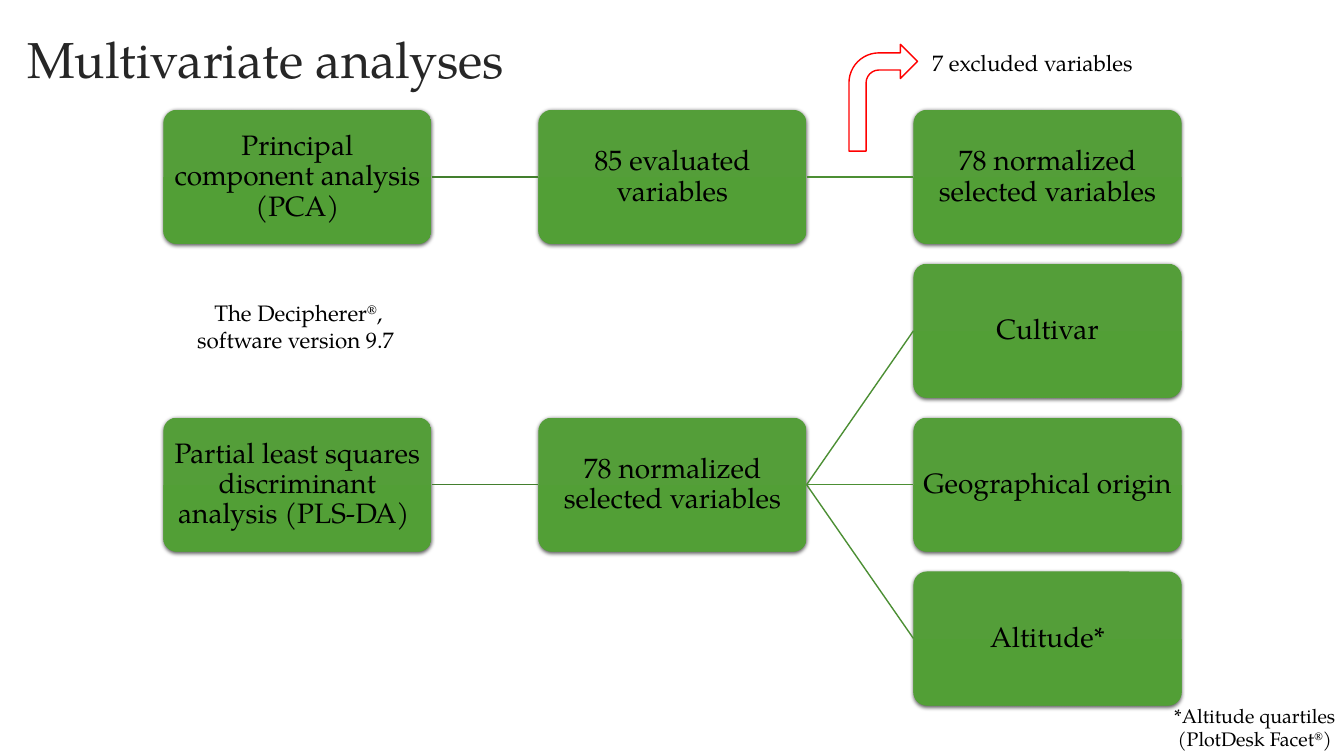
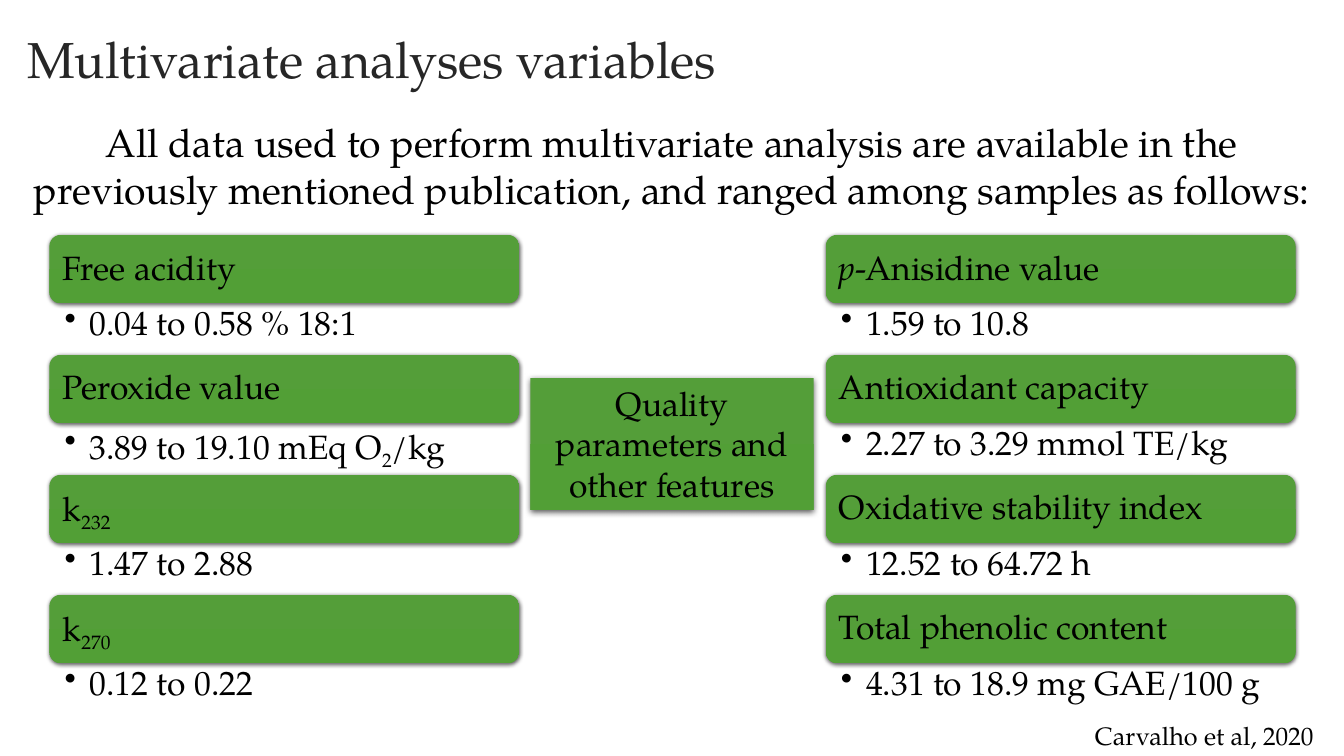
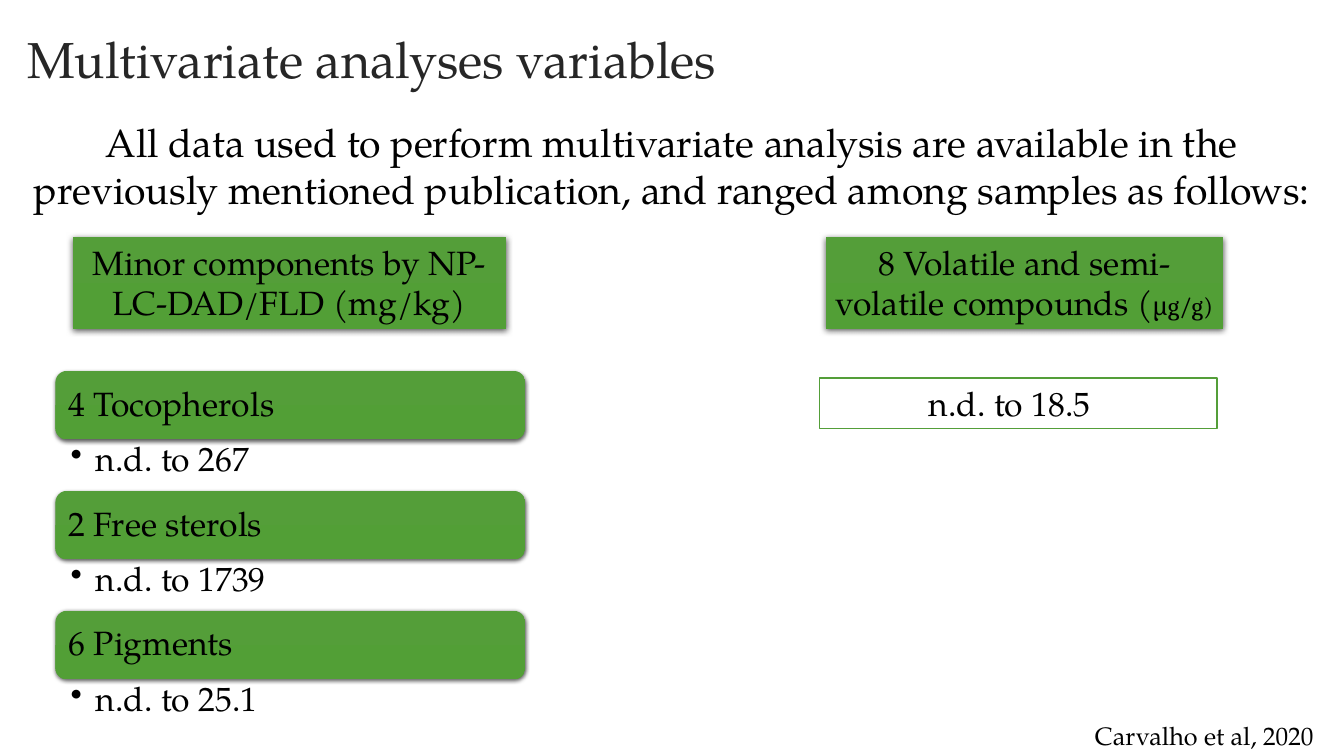
from dataclasses import dataclass
from typing import NamedTuple

from lxml import etree
from pptx import Presentation
from pptx.dml.color import RGBColor
from pptx.enum.shapes import MSO_CONNECTOR, MSO_SHAPE
from pptx.enum.text import MSO_ANCHOR, MSO_AUTO_SIZE, PP_ALIGN
from pptx.oxml.ns import qn
from pptx.util import Inches, Pt

LEFT, CENTER = PP_ALIGN.LEFT, PP_ALIGN.CENTER
TOP, MIDDLE = MSO_ANCHOR.TOP, MSO_ANCHOR.MIDDLE
NO_FIT = MSO_AUTO_SIZE.NONE
RECTANGLE, ROUNDED = MSO_SHAPE.RECTANGLE, MSO_SHAPE.ROUNDED_RECTANGLE
BENT_ARROW = MSO_SHAPE.BENT_ARROW
STRAIGHT = MSO_CONNECTOR.STRAIGHT
TITLE_ONLY = 5
LEFT_SIDE, RIGHT_SIDE = 1, 3


@dataclass(frozen=True)
class Theme:
    """Colours, fonts and type sizes of the deck."""
    font: str = "TeX Gyre Pagella"
    symbol_font: str = "Cambria"
    ink: RGBColor = RGBColor(0x00, 0x00, 0x00)
    title_ink: RGBColor = RGBColor(0x26, 0x26, 0x26)
    paper: RGBColor = RGBColor(0xFF, 0xFF, 0xFF)
    green: RGBColor = RGBColor(0x54, 0x9E, 0x39)
    green_end: RGBColor = RGBColor(0x52, 0x9F, 0x36)
    first_link: RGBColor = RGBColor(0x43, 0x7F, 0x2E)
    second_link: RGBColor = RGBColor(0x4C, 0x8F, 0x34)
    alert: RGBColor = RGBColor(0xFF, 0x00, 0x00)
    title: int = 36
    intro: int = 28
    body: int = 24
    step: int = 20
    citation: int = 18
    note: int = 16
    footnote: int = 14


class Box(NamedTuple):
    """A region in inches."""
    left: float
    top: float
    width: float
    height: float

    def lengths(self):
        """Return the four measures as lengths."""
        return [Inches(measure) for measure in self]


THEME = Theme()
TITLE_BOX = Box(0.17, 0.25, 12.61, 0.74)
INTRO_BOX = Box(0.08, 1.12, 13.16, 1.04)
CITATION_BOX = Box(10.56, 7.1, 2.77, 0.4)
INSETS = (0.1, 0.05, 0.1, 0.05)
SUPERSCRIPT = {"baseline": 30}
SUBSCRIPT = {"baseline": -25}

INTRO = ("All data used to perform multivariate analysis are available in the "
         "previously mentioned publication, and ranged among samples as follows:")
CITATION = "Carvalho et al, 2020"
STEPS = {
    "pca": (0, 0, "Principal component analysis (PCA)"),
    "evaluated": (1, 0, "85 evaluated variables"),
    "selected": (2, 0, "78 normalized selected variables"),
    "plsda": (0, 2, "Partial least squares discriminant analysis (PLS-DA) "),
    "normalized": (1, 2, "78 normalized selected variables"),
    "cultivar": (2, 1, "Cultivar"),
    "origin": (2, 2, "Geographical origin"),
    "altitude": (2, 3, "Altitude*"),
}
LINKS = [
    ("pca", "evaluated"), ("evaluated", "selected"), ("plsda", "normalized"),
    ("normalized", "cultivar"), ("normalized", "origin"), ("normalized", "altitude"),
]
OXIDATION = [
    ("Free acidity", "0.04 to 0.58 % 18:1"),
    ("Peroxide value", [("3.89 to 19.10 mEq O", {}), ("2", SUBSCRIPT), ("/kg", {})]),
    ([("k", {}), ("232", SUBSCRIPT)], "1.47 to 2.88"),
    ([("k", {}), ("270", SUBSCRIPT)], "0.12 to 0.22"),
]
STABILITY = [
    ([("p", {"italic": True}), ("-Anisidine value", {})], "1.59 to 10.8"),
    ("Antioxidant capacity", "2.27 to 3.29 mmol TE/kg"),
    ("Oxidative stability index", "12.52 to 64.72 h"),
    ("Total phenolic content", "4.31 to 18.9 mg GAE/100 g"),
]
MINOR_COMPONENTS = [
    ("4 Tocopherols", "n.d. to 267"),
    ("2 Free sterols", "n.d. to 1739"),
    ("6 Pigments", "n.d. to 25.1"),
]


def write(frame, text, size, color=THEME.ink, align=CENTER, anchor=TOP,
          insets=INSETS, spacing=1.0, bullet=None):
    """Write a string, or a list of (string, format) runs, as one paragraph."""
    frame.word_wrap = True
    frame.auto_size = NO_FIT
    frame.vertical_anchor = anchor
    (frame.margin_left, frame.margin_top,
     frame.margin_right, frame.margin_bottom) = [Inches(inset) for inset in insets]
    paragraph = frame.paragraphs[0]
    paragraph.alignment = align
    paragraph.line_spacing = spacing
    if bullet:
        properties = paragraph._p.get_or_add_pPr()
        properties.set("marL", str(Inches(0.25)))
        properties.set("indent", str(-Inches(0.25)))
        etree.SubElement(properties, qn("a:buChar"), char=bullet)
    for words, style in [(text, {})] if isinstance(text, str) else text:
        run = paragraph.add_run()
        run.text = words
        run.font.name = style.get("font", THEME.font)
        run.font.size = Pt(style.get("size", size))
        run.font.color.rgb = color
        run.font.italic = style.get("italic")
        if "baseline" in style:
            run.font._element.set("baseline", str(style["baseline"] * 1000))


def add_label(slide, box, text, size, **style):
    """Add a text box."""
    label = slide.shapes.add_textbox(*box.lengths())
    write(label.text_frame, text, size, **style)


def add_panel(slide, box, text, size, kind=RECTANGLE, blur=4.5, distance=1.5, **style):
    """Add a green shape with a soft shadow and text."""
    panel = slide.shapes.add_shape(kind, *box.lengths())
    panel.fill.gradient()
    panel.fill.gradient_angle = 270
    for stop, color in zip(panel.fill.gradient_stops, (THEME.green, THEME.green_end)):
        stop.color.rgb = color
    panel.line.fill.background()
    panel.shadow.inherit = False
    effects = panel._element.spPr.find(qn("a:effectLst"))
    shadow = etree.SubElement(
        effects, qn("a:outerShdw"), blurRad=str(Pt(blur)), dist=str(Pt(distance)),
        dir="5400000", algn="ctr", rotWithShape="0")
    shade = etree.SubElement(shadow, qn("a:srgbClr"), val="000000")
    etree.SubElement(shade, qn("a:alpha"), val="63000")
    write(panel.text_frame, text, size, **style)
    return panel


def add_outline(slide, kind, box, color):
    """Add an unfilled shape with a thin outline."""
    outline = slide.shapes.add_shape(kind, *box.lengths())
    outline.fill.background()
    outline.line.color.rgb = color
    outline.line.width = Pt(1)
    outline.shadow.inherit = False
    return outline


def add_link(slide, source, target, color):
    """Join the right side of one step to the left side of another."""
    link = slide.shapes.add_connector(STRAIGHT, 0, 0, 0, 0)
    link.begin_connect(source, RIGHT_SIDE)
    link.end_connect(target, LEFT_SIDE)
    link.line.color.rgb = color
    link.line.width = Pt(1)
    etree.SubElement(link._element.spPr, qn("a:effectLst"))


def add_flow(slide, box):
    """Draw the analysis steps on a grid of three columns and four rows."""
    width, height = 2.66, 1.33
    column_pitch = (box.width - width) / 2
    row_pitch = (box.height - height) / 3
    panels = {}
    for key, (column, row, text) in STEPS.items():
        cell = Box(box.left + column * column_pitch, box.top + row * row_pitch,
                   width, height)
        panels[key] = add_panel(
            slide, cell, text, THEME.step, kind=ROUNDED, blur=3, distance=1,
            anchor=MIDDLE, insets=(0.01,) * 4, spacing=0.9)
        panels[key].adjustments[0] = 0.1
    for source, target in LINKS:
        color = THEME.first_link if STEPS[source][0] == 0 else THEME.second_link
        add_link(slide, panels[source], panels[target], color)


def add_ranges(slide, box, ranges):
    """Stack green headings, each with its bulleted range below."""
    pitch = box.height / len(ranges)
    heading_height = 0.68
    for index, (heading, extent) in enumerate(ranges):
        top = box.top + index * pitch
        add_panel(slide, Box(box.left, top, box.width, heading_height), heading,
                  THEME.body, kind=ROUNDED, blur=3, distance=1, align=LEFT,
                  anchor=MIDDLE, insets=(0.1,) * 4, spacing=0.9)
        add_label(slide, Box(box.left, top + heading_height, box.width,
                             pitch - heading_height),
                  extent, THEME.body, align=LEFT, insets=(0.15, 0.03, 0.19, 0.03),
                  spacing=0.9, bullet="•")


def add_titled_slide(deck, text):
    """Add a slide with the shared title style."""
    slide = deck.slides.add_slide(deck.slide_layouts[TITLE_ONLY])
    title = slide.shapes.title
    title.left, title.top, title.width, title.height = TITLE_BOX.lengths()
    write(title.text_frame, text, THEME.title, color=THEME.title_ink, align=LEFT,
          anchor=MIDDLE, spacing=0.9)
    return slide


def add_variables_slide(deck):
    """Add a slide with the title, introduction and citation on variables."""
    slide = add_titled_slide(deck, "Multivariate analyses variables")
    add_label(slide, INTRO_BOX, INTRO, THEME.intro)
    add_label(slide, CITATION_BOX, CITATION, THEME.citation)
    return slide


def build_analyses(deck):
    """Build the overview of the analyses."""
    slide = add_titled_slide(deck, "Multivariate analyses")
    add_flow(slide, Box(1.62, 1.09, 10.1, 5.91))
    add_label(slide, Box(11.39, 6.93, 2.11, 0.57),
              [("*Altitude quartiles (PlotDesk Facet", {}), ("®", SUPERSCRIPT), (")", {})],
              THEME.footnote)
    add_label(slide, Box(1.81, 2.92, 2.3, 0.64),
              [("The Decipherer", {}), ("®", SUPERSCRIPT),
               (", software version 9.7 ", {})], THEME.note)
    add_outline(slide, BENT_ARROW, Box(8.42, 0.44, 0.68, 1.06), THEME.alert)
    add_label(slide, Box(9.09, 0.44, 2.3, 0.37), "7 excluded variables", THEME.note)


def build_quality(deck):
    """Build the slide on quality parameters."""
    slide = add_variables_slide(deck)
    add_ranges(slide, Box(8.19, 2.33, 4.66, 4.76), STABILITY)
    add_ranges(slide, Box(0.49, 2.33, 4.66, 4.76), OXIDATION)
    add_panel(slide, Box(5.26, 3.75, 2.81, 1.31),
              "Quality parameters and other features", THEME.body)


def build_components(deck):
    """Build the slide on minor components and volatile compounds."""
    slide = add_variables_slide(deck)
    add_ranges(slide, Box(0.55, 3.68, 4.66, 3.57), MINOR_COMPONENTS)
    add_panel(slide, Box(0.72, 2.35, 4.3, 0.91),
              "Minor components by NP-LC-DAD/FLD (mg/kg)", THEME.body)
    add_panel(slide, Box(8.19, 2.35, 3.94, 0.91),
              [("8 Volatile and semi-volatile compounds (", {}),
               ("μg/g)", {"font": THEME.symbol_font, "size": THEME.citation})],
              THEME.body)
    volatile_range = add_outline(slide, RECTANGLE, Box(8.13, 3.75, 3.94, 0.5), THEME.green)
    volatile_range.fill.solid()
    volatile_range.fill.fore_color.rgb = THEME.paper
    write(volatile_range.text_frame, "n.d. to 18.5", THEME.body,
          insets=(0.1, 0.05, 0.27, 0.05))


def main():
    """Build and save the deck."""
    deck = Presentation()
    deck.slide_width, deck.slide_height = Inches(13.33), Inches(7.5)
    build_analyses(deck)
    build_quality(deck)
    build_components(deck)
    deck.save("out.pptx")


if __name__ == "__main__":
    main()
